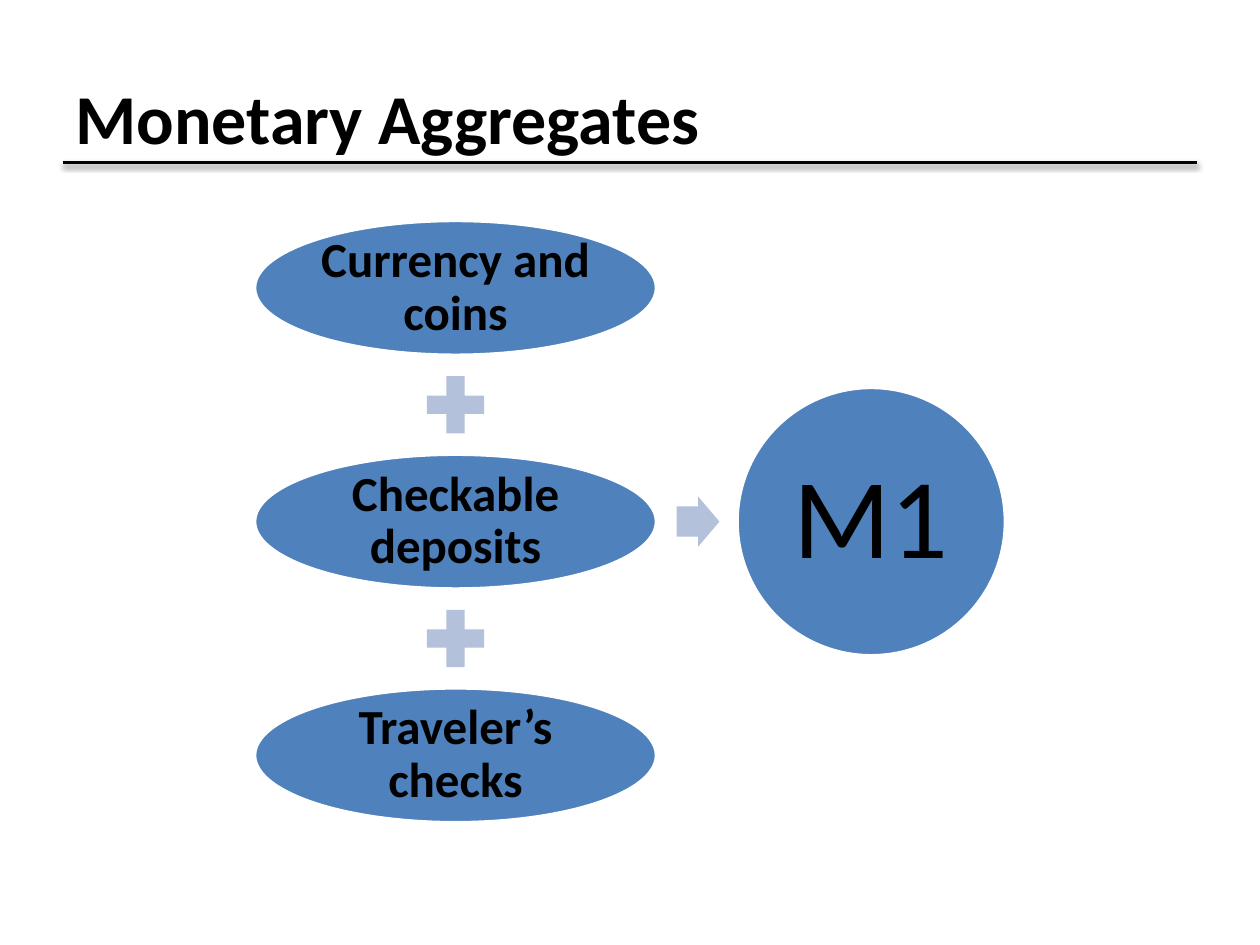
import pptx
import pptx.util
import pptx.dml.color
import pptx.enum.shapes
import pptx.enum.text
import pptx.oxml
import pptx.oxml.ns

SHAPES = pptx.enum.shapes.MSO_SHAPE
ALIGN = pptx.enum.text.PP_ALIGN
COLORS = {"text": "000000", "node": "4F81BD", "operator": "B3C1DB", "outline": "FFFFFF"}
COLUMNS, ROWS = 100, 75
TITLE_ONLY = 5


def rgb(name):
    return pptx.dml.color.RGBColor.from_string(COLORS[name])


class DiagramSlide:
    """Holds the style and the slide; lengths are in grid columns and rows."""

    font_name = "Calibri"

    def __init__(self, deck):
        self.slide = deck.slides.add_slide(deck.slide_layouts[TITLE_ONLY])
        self.column = deck.slide_width / COLUMNS
        self.row = deck.slide_height / ROWS

    def box(self, left, top, width, height):
        return (round(left * self.column), round(top * self.row),
                round(width * self.column), round(height * self.row))

    def set_text(self, frame, text, size, bold, align, inset):
        frame.text = text
        frame.word_wrap = True
        frame.auto_size = pptx.enum.text.MSO_AUTO_SIZE.NONE
        frame.vertical_anchor = pptx.enum.text.MSO_ANCHOR.MIDDLE
        frame.margin_left = frame.margin_right = pptx.util.Inches(inset)
        frame.margin_top = frame.margin_bottom = pptx.util.Inches(min(inset, 0.09))
        paragraph = frame.paragraphs[0]
        paragraph.alignment = align
        font = paragraph.runs[0].font
        font.name, font.size, font.bold = self.font_name, pptx.util.Pt(size), bold
        font.color.rgb = rgb("text")
        return paragraph

    def title(self, text, left, top, width, height):
        heading = self.slide.shapes.title
        heading.left, heading.top, heading.width, heading.height = self.box(
            left, top, width, height)
        self.set_text(heading.text_frame, text, 40, True, ALIGN.LEFT, 0.1)

    def rule(self, left, right, y):
        """Draw the shadowed line under the title."""
        start_x, start_y, length, _ = self.box(left, y, right - left, 0)
        line = self.slide.shapes.add_connector(
            pptx.enum.shapes.MSO_CONNECTOR.STRAIGHT,
            start_x, start_y, start_x + length, start_y)
        line.line.color.rgb = rgb("text")
        line.line.width = pptx.util.Pt(2)
        blur, distance = pptx.util.Pt(3.1), pptx.util.Pt(1.6)
        line._element.spPr.append(pptx.oxml.parse_xml(
            f'<a:effectLst {pptx.oxml.ns.nsdecls("a")}>'
            f'<a:outerShdw blurRad="{blur}" dist="{distance}" dir="5400000" rotWithShape="0">'
            f'<a:srgbClr val="{COLORS["text"]}"><a:alpha val="38000"/></a:srgbClr>'
            '</a:outerShdw></a:effectLst>'))

    def shape(self, kind, center_x, center_y, width, height, color):
        shape = self.slide.shapes.add_shape(kind, *self.box(
            center_x - width / 2, center_y - height / 2, width, height))
        shape.shadow.inherit = False
        shape.fill.solid()
        shape.fill.fore_color.rgb = rgb(color)
        shape.line.fill.background()
        return shape

    def node(self, text, center_x, center_y, width, height, size, bold, inset):
        ellipse = self.shape(SHAPES.OVAL, center_x, center_y, width, height, "node")
        ellipse.line.color.rgb = rgb("outline")
        ellipse.line.width = pptx.util.Pt(2)
        paragraph = self.set_text(ellipse.text_frame, text, size, bold, ALIGN.CENTER, inset)
        paragraph.line_spacing = 0.9

    def plus(self, center_x, center_y):
        self.shape(SHAPES.MATH_PLUS, center_x, center_y, 6.2, 6.2, "operator")

    def arrow(self, center_x, center_y):
        arrow = self.shape(SHAPES.RIGHT_ARROW, center_x, center_y, 3.4, 4, "operator")
        arrow.adjustments[0] = 0.6


def main():
    deck = pptx.Presentation()
    deck.slide_width, deck.slide_height = pptx.util.Inches(10), pptx.util.Inches(7.5)
    aggregates = DiagramSlide(deck)
    aggregates.rule(5, 95, 12.9)
    aggregates.title("Monetary Aggregates", 5, 3, 90, 12.5)

    components = ["Currency and coins", "Checkable deposits", "Traveler’s checks"]
    component_x, middle_y, pitch = 36.15, 41.4, 18.55
    for index, component in enumerate(components):
        center_y = middle_y + (index - 1) * pitch
        if index:
            aggregates.plus(component_x, center_y - pitch / 2)
        aggregates.node(component, component_x, center_y, 31.9, 10.7, 28, True, 0.04)

    aggregates.arrow(55.4, middle_y)
    aggregates.node("M1", 69.15, middle_y, 21.3, 21.3, 65, False, 0.09)
    deck.save("out.pptx")


if __name__ == "__main__":
    main()
